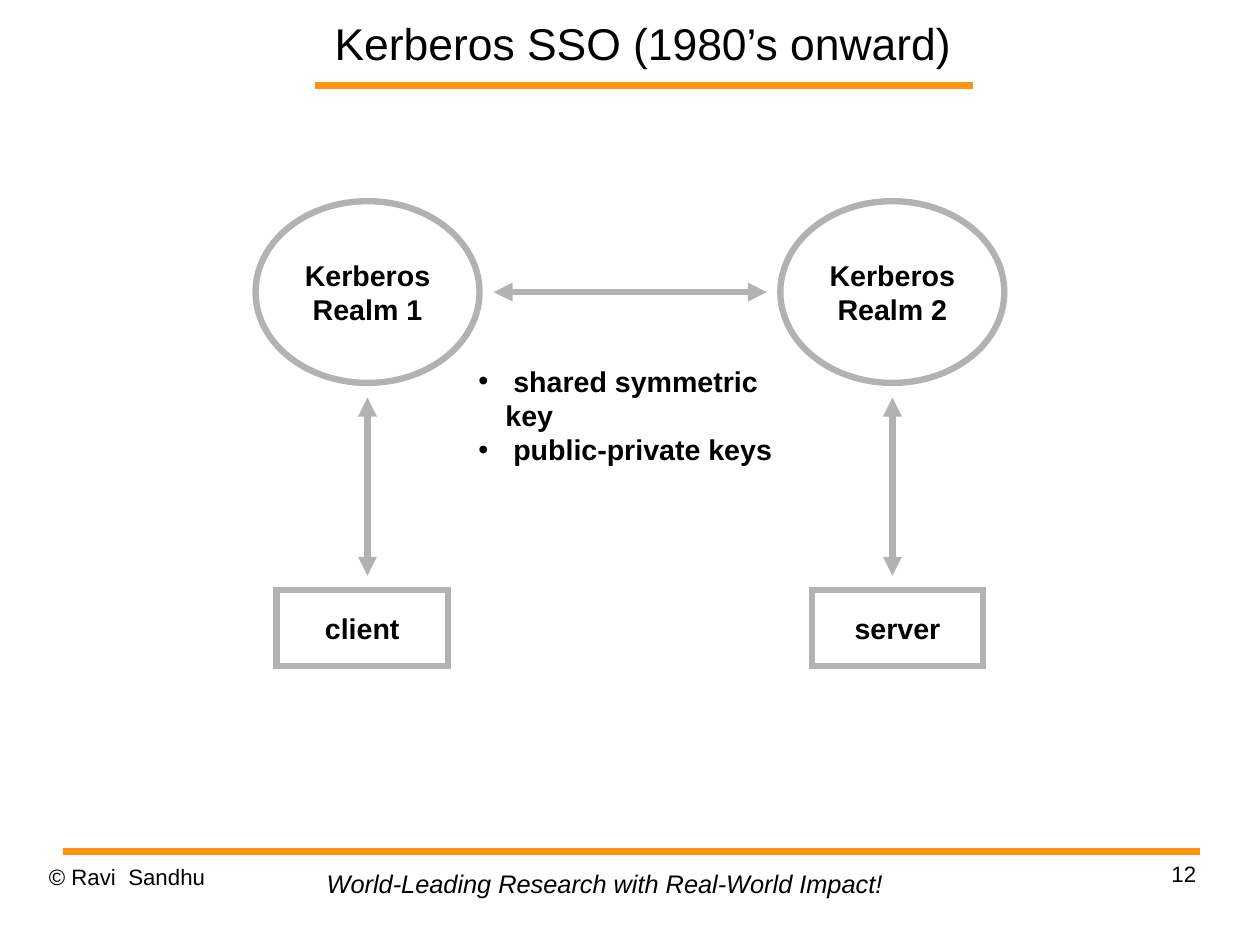
from lxml import etree
from pptx import Presentation
from pptx.dml.color import RGBColor
from pptx.enum.shapes import MSO_CONNECTOR, MSO_SHAPE
from pptx.enum.text import MSO_ANCHOR, PP_ALIGN
from pptx.oxml.ns import qn
from pptx.util import Pt

STRAIGHT = MSO_CONNECTOR.STRAIGHT
OVAL, RECTANGLE = MSO_SHAPE.OVAL, MSO_SHAPE.RECTANGLE
TOP, MIDDLE = MSO_ANCHOR.TOP, MSO_ANCHOR.MIDDLE
LEFT, CENTER, RIGHT = PP_ALIGN.LEFT, PP_ALIGN.CENTER, PP_ALIGN.RIGHT
ORANGE, GRAY, BLACK = map(RGBColor.from_string, ("FF950E", "B2B2B2", "000000"))

deck = Presentation()
deck.slide_width, deck.slide_height = Pt(793.75), Pt(595.25)
page = deck.slides.add_slide(deck.slide_layouts[6])


def write(box, text, size, align=LEFT, anchor=TOP, margins=(0, 0),
          bold=False, italic=False, wrap=True, bullet=False):
    frame = box.text_frame
    frame.text = text
    frame.word_wrap = wrap
    frame.vertical_anchor = anchor
    frame.margin_left = frame.margin_right = Pt(margins[0])
    frame.margin_top = frame.margin_bottom = Pt(margins[1])
    for para in frame.paragraphs:
        para.alignment = align
        if bullet:
            props = para._p.get_or_add_pPr()
            props.set("marL", str(Pt(17)))
            props.set("indent", str(-Pt(17)))
            etree.SubElement(props, qn("a:buFont"), typeface="Arial")
            etree.SubElement(props, qn("a:buChar"), char="•")
        for span in para.runs:
            font = span.font
            font.name, font.size = "Arial", Pt(size)
            font.bold, font.italic = bold, italic
            font.color.rgb = BLACK


def add_line(x1, y1, x2, y2, color, width, arrows=False):
    line = page.shapes.add_connector(STRAIGHT, Pt(x1), Pt(y1), Pt(x2), Pt(y2))
    line.line.color.rgb = color
    line.line.width = Pt(width)
    if arrows:
        outline = line.line._get_or_add_ln()
        for end in ("a:headEnd", "a:tailEnd"):
            etree.SubElement(outline, qn(end), type="triangle")
    etree.SubElement(line._element.spPr, qn("a:effectLst"))


# Title and footer rules
add_line(198.7, 54, 612.7, 54, ORANGE, 4.31)
add_line(39.4, 536.2, 755.8, 536.2, ORANGE, 4.31)

# Title, footer texts and the label between the realms
texts = [
    ((173.3, 0, 463, 54), "Kerberos SSO (1980’s onward)", 28,
     dict(align=CENTER, anchor=MIDDLE)),
    ((30.8, 543.6, 185, 41), "© Ravi  Sandhu", 14, {}),
    ((568.6, 542.2, 185, 41), "12", 14, dict(align=RIGHT)),
    ((198.7, 543.6, 365.8, 26.6),
     "World-Leading Research with Real-World Impact!", 16,
     dict(margins=(7.2, 3.6), italic=True, wrap=False)),
    ((293.5, 225.4, 218.2, 51.1),
     " shared symmetric key\n public-private keys", 18,
     dict(margins=(7.9, 3.6), bold=True, bullet=True)),
]
for place, text, size, style in texts:
    box = page.shapes.add_textbox(*map(Pt, place))
    write(box, text, size, **style)

# Realms, client and server
nodes = [
    (OVAL, (161, 126.7, 141.1, 114.5), "Kerberos\nRealm 1"),
    (OVAL, (491.6, 126.7, 141.1, 114.5), "Kerberos\nRealm 2"),
    (RECTANGLE, (174.2, 371.5, 108, 48.2), "client"),
    (RECTANGLE, (511.4, 371.5, 108, 48.2), "server"),
]
for kind, place, text in nodes:
    node = page.shapes.add_shape(kind, *map(Pt, place))
    node.shadow.inherit = False
    node.fill.background()
    node.line.color.rgb = GRAY
    node.line.width = Pt(4)
    # Square corners
    etree.SubElement(node.line._get_or_add_ln(), qn("a:miter"), lim="800000")
    write(node, text, 18, CENTER, MIDDLE, (7.9, 3.6), bold=True, wrap=False)

# Two-way arrows
add_line(311, 184, 483.1, 184, GRAY, 4, arrows=True)
for x in (231.5, 562.2):
    add_line(x, 250.4, x, 362.7, GRAY, 4, arrows=True)

deck.save("out.pptx")
